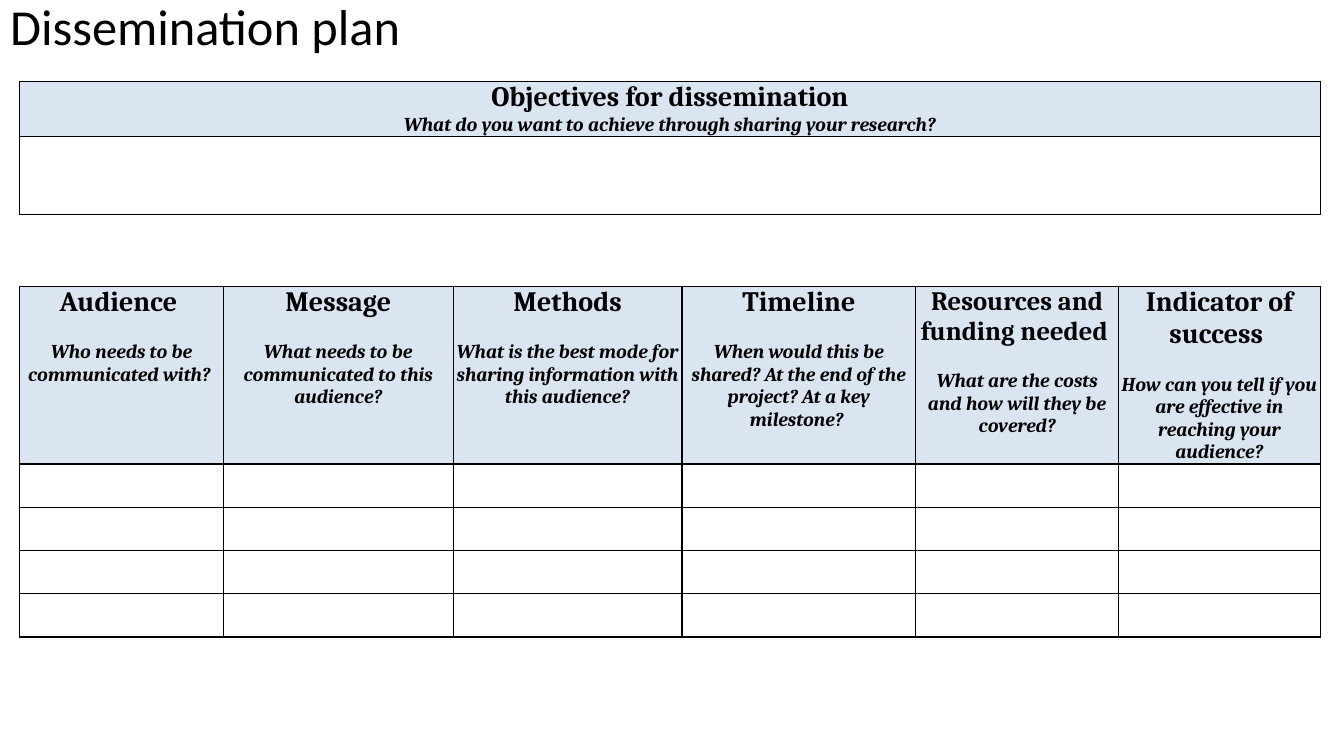
from lxml import etree
from pptx import Presentation
from pptx.dml.color import RGBColor
from pptx.enum.text import MSO_ANCHOR, MSO_AUTO_SIZE, PP_ALIGN
from pptx.oxml.ns import qn
from pptx.util import Cm, Pt

CENTER, LEFT = PP_ALIGN.CENTER, PP_ALIGN.LEFT
MIDDLE = MSO_ANCHOR.MIDDLE
NO_AUTOFIT = MSO_AUTO_SIZE.NONE
BLACK = RGBColor(0x00, 0x00, 0x00)
WHITE = RGBColor(0xFF, 0xFF, 0xFF)
PALE_BLUE = RGBColor(0xDB, 0xE5, 0xF1)

TITLE = "Dissemination plan"
# Each heading: name, name size in points, guiding question
OBJECTIVES = [
    ("Objectives for dissemination", 20,
     "What do you want to achieve through sharing your research?"),
]
PLAN = [
    ("Audience ", 20, "Who needs to be communicated with? "),
    ("Message", 20, "What needs to be communicated to this audience?"),
    ("Methods", 20,
     "What is the best mode for sharing information with this audience?"),
    ("Timeline", 20,
     "When would this be shared? At the end of the project? At a key milestone? "),
    ("Resources and funding needed ", 19,
     "What are the costs and how will they be covered?"),
    ("Indicator of success ", 20,
     "How can you tell if you are effective in reaching your audience?"),
]
OBJECTIVES_WIDTHS = [32.77]
OBJECTIVES_HEIGHTS = [1.39, 1.97]
PLAN_WIDTHS = [5.13, 5.79, 5.77, 5.89, 5.11, 5.08]
PLAN_HEIGHTS = [4.47] + [1.09] * 4
TABLE_LEFT = 0.5


def add_borders(cell):
    properties = cell._tc.get_or_add_tcPr()
    for position, side in enumerate(("lnL", "lnR", "lnT", "lnB")):
        line = etree.Element(qn(f"a:{side}"), w=str(Pt(1)))
        fill = etree.SubElement(line, qn("a:solidFill"))
        etree.SubElement(fill, qn("a:srgbClr"), val=str(BLACK))
        properties.insert(position, line)


def write_heading(cell, heading, inset, gap):
    name, name_size, question = heading
    cell.margin_left = cell.margin_right = Cm(inset)
    cell.margin_top = cell.margin_bottom = 0
    frame = cell.text_frame
    frame.text = f"{name}\n{question}"
    name_para, question_para = frame.paragraphs
    question_para.space_before = Pt(gap)
    for para, size in ((name_para, name_size), (question_para, 14)):
        para.alignment = CENTER
        font = para.runs[0].font
        font.name, font.size, font.bold = "Cambria", Pt(size), True
        font.italic = para is question_para
        font.color.rgb = BLACK


def add_form(slide, top, widths, heights, headings, inset, gap):
    """Add a bordered table with a heading row above empty rows."""
    table = slide.shapes.add_table(
        len(heights), len(widths), Cm(TABLE_LEFT), Cm(top),
        Cm(sum(widths)), Cm(sum(heights))).table
    for column, width in zip(table.columns, widths):
        column.width = Cm(width)
    for row, height in zip(table.rows, heights):
        row.height = Cm(height)
    for cell in table.iter_cells():
        cell.fill.solid()
        cell.fill.fore_color.rgb = WHITE
        add_borders(cell)
    for cell, heading in zip(table.rows[0].cells, headings):
        cell.fill.fore_color.rgb = PALE_BLUE
        write_heading(cell, heading, inset, gap)


def add_title(slide):
    title = slide.shapes.title
    title.left, title.top = 0, 0
    title.width, title.height = Cm(29.21), Cm(1.47)
    frame = title.text_frame
    frame.text = TITLE
    frame.auto_size = NO_AUTOFIT
    frame.vertical_anchor = MIDDLE
    para = frame.paragraphs[0]
    para.alignment = LEFT
    para.line_spacing = 0.9
    font = para.runs[0].font
    font.name, font.size = "Calibri", Pt(36)
    font.color.rgb = BLACK


def main():
    deck = Presentation()
    deck.slide_width, deck.slide_height = Cm(33.87), Cm(19.05)
    slide = deck.slides.add_slide(deck.slide_layouts.get_by_name("Title Only"))
    add_title(slide)
    add_form(slide, 2.05, OBJECTIVES_WIDTHS, OBJECTIVES_HEIGHTS, OBJECTIVES,
             inset=0.18, gap=0)
    add_form(slide, 7.22, PLAN_WIDTHS, PLAN_HEIGHTS, PLAN, inset=0.07, gap=16)
    deck.save("out.pptx")


if __name__ == "__main__":
    main()
